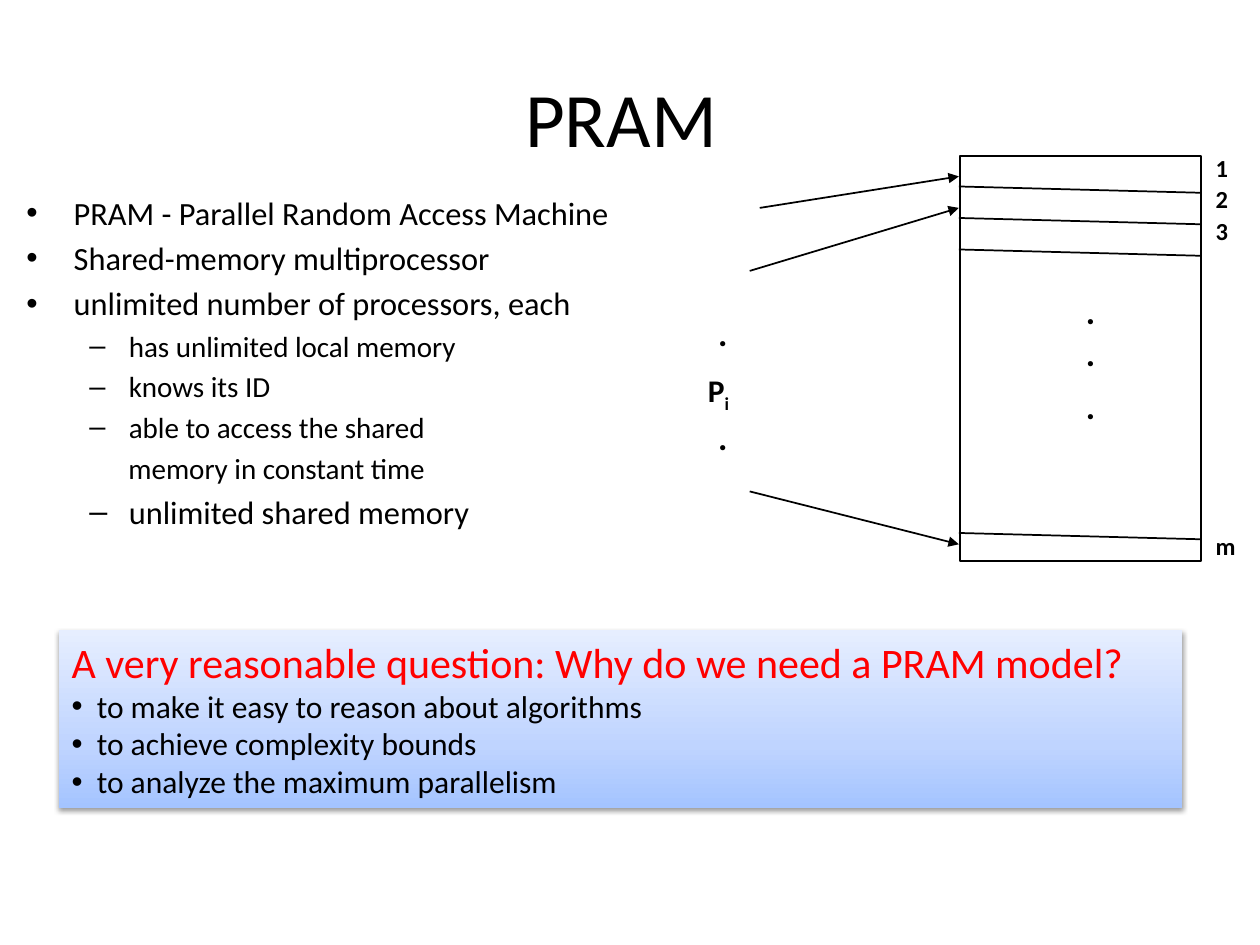
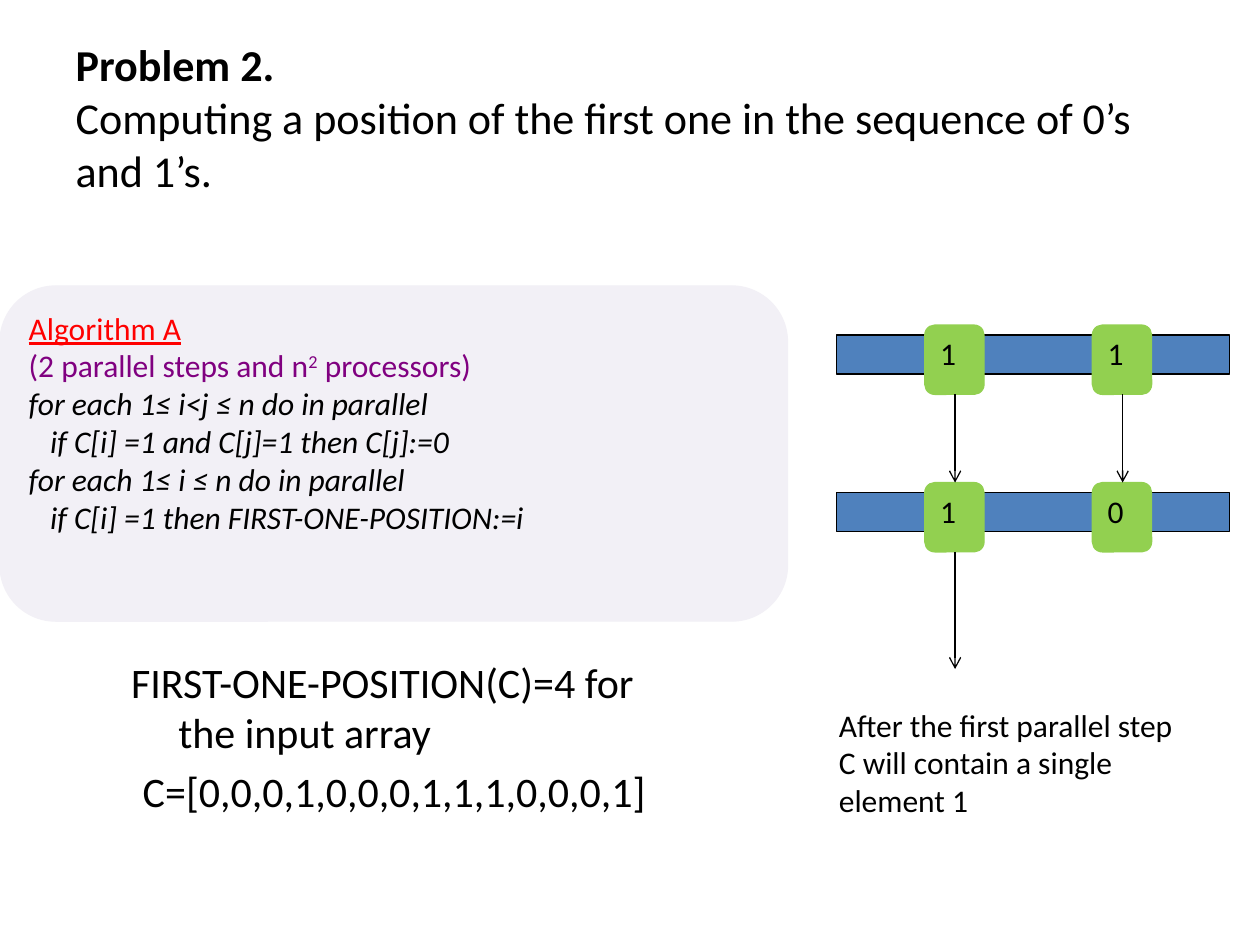
"""Build two slides on the PRAM model and the first-one-position problem."""
import copy

import lxml.etree
import pptx
import pptx.dml.color
import pptx.enum.shapes
import pptx.enum.text
import pptx.oxml.ns
import pptx.util

Inches = pptx.util.Inches
Pt = pptx.util.Pt
qn = pptx.oxml.ns.qn
SHAPES = pptx.enum.shapes.MSO_SHAPE
ALIGN = pptx.enum.text.PP_ALIGN
ANCHOR = pptx.enum.text.MSO_ANCHOR
AUTOSIZE = pptx.enum.text.MSO_AUTO_SIZE

FONT = "Calibri"
COLORS = {
    "black": "000000", "white": "FFFFFF", "red": "FF0000", "purple": "800080",
    "panel": "F2F0F6", "bar": "4F81BD", "cell": "92D050",
    "sky_low": "A4C4FF", "sky_mid": "BFD4FF", "sky_high": "E6EEFF",
}


def rgb(name):
    """Return the named colour."""
    return pptx.dml.color.RGBColor.from_string(COLORS[name])


def add_line(frame, text, size, color="black", bold=None, italic=None,
             level=0, bullet=None, left=None, hang=0):
    """Add a paragraph; text is a string or a list of (text, baseline) runs."""
    paragraph = frame.add_paragraph() if frame.text else frame.paragraphs[0]
    paragraph.level = level
    properties = paragraph._p.get_or_add_pPr()
    if left is not None:
        properties.set("marL", str(Inches(left)))
        properties.set("indent", str(Inches(-hang)))
    if bullet == "none":
        lxml.etree.SubElement(properties, qn("a:buNone"))
    elif bullet:
        lxml.etree.SubElement(properties, qn("a:buFont")).set("typeface", "Arial")
        lxml.etree.SubElement(properties, qn("a:buChar")).set("char", bullet)
    font = paragraph.font
    font.name, font.size, font.bold, font.italic = FONT, Pt(size), bold, italic
    font.color.rgb = rgb(color)
    for content, baseline in [(text, 0)] if isinstance(text, str) else text:
        run = paragraph.add_run()
        run.text = content
        if baseline:
            run._r.get_or_add_rPr().set("baseline", str(baseline * 1000))
    return paragraph


def place(placeholder, left, top, width, height):
    """Move a placeholder and return its text frame at a fixed text size."""
    placeholder.left, placeholder.top = Inches(left), Inches(top)
    placeholder.width, placeholder.height = Inches(width), Inches(height)
    placeholder.text_frame.auto_size = AUTOSIZE.NONE
    return placeholder.text_frame


def title_frame(slide):
    """Place the title where both slides have it."""
    frame = place(slide.shapes.title, 0.5, 0.3, 9, 1.25)
    frame.vertical_anchor = ANCHOR.MIDDLE
    return frame


def add_box(slide, kind, left, top, width, height, fill=None, line=None, weight=0.75):
    """Add a flat preset shape with text at top left."""
    box = slide.shapes.add_shape(kind, Inches(left), Inches(top), Inches(width), Inches(height))
    box.shadow.inherit = False
    if fill:
        box.fill.solid()
        box.fill.fore_color.rgb = rgb(fill)
    if line:
        box.line.color.rgb = rgb(line)
        box.line.width = Pt(weight)
    else:
        box.line.fill.background()
    box.text_frame.word_wrap = True
    box.text_frame.vertical_anchor = ANCHOR.TOP
    box.text_frame.paragraphs[0].alignment = ALIGN.LEFT
    return box


def add_stroke(slide, start, end, weight=1, head=None):
    """Draw a straight black line, with an arrowhead at its end if named."""
    stroke = slide.shapes.add_connector(
        pptx.enum.shapes.MSO_CONNECTOR.STRAIGHT, *map(Inches, start + end))
    stroke.line.color.rgb = rgb("black")
    stroke.line.width = Pt(weight)
    properties = stroke._element.spPr
    if head:
        lxml.etree.SubElement(properties.find(qn("a:ln")), qn("a:tailEnd")).set("type", head)
    lxml.etree.SubElement(properties, qn("a:effectLst"))


def add_text(slide, left, top, width, height, wrap=True):
    """Add a text box and return its frame."""
    frame = slide.shapes.add_textbox(
        Inches(left), Inches(top), Inches(width), Inches(height)).text_frame
    frame.word_wrap = wrap
    frame.auto_size = AUTOSIZE.SHAPE_TO_FIT_TEXT
    return frame


def add_label(slide, text, left, top, width, height, size, wrap=False):
    """Add a bold diagram label."""
    frame = add_text(slide, left, top, width, height, wrap)
    add_line(frame, text, size, bold=True).line_spacing = 0.9


def add_glow(box):
    """Give a box the blue gradient and a soft shadow below it."""
    box.fill.gradient()
    box.fill.gradient_angle = 90
    properties = box._element.spPr
    stops = properties.find(".//" + qn("a:gsLst"))
    stops.append(copy.deepcopy(stops[0]))
    sky = [(0, "sky_low"), (0.35, "sky_mid"), (1, "sky_high")]
    for stop, (position, color) in zip(box.fill.gradient_stops, sky):
        stop.position = position
        stop.color.rgb = rgb(color)
    shadow = lxml.etree.SubElement(properties.find(qn("a:effectLst")), qn("a:outerShdw"))
    for key, value in (("blurRad", Pt(3.1)), ("dist", Pt(1.6)), ("dir", 90 * 60000),
                       ("rotWithShape", 0)):
        shadow.set(key, str(int(value)))
    black = lxml.etree.SubElement(shadow, qn("a:srgbClr"))
    black.set("val", COLORS["black"])
    lxml.etree.SubElement(black, qn("a:alpha")).set("val", "38000")


def add_memory_diagram(slide):
    """Draw the processors and the shared memory they access."""
    memory_left, memory_right, drop = 7.61, 9.53, 0.05
    add_box(slide, SHAPES.RECTANGLE, 7.62, 1.24, 1.91, 3.21, "white", "black", 1)
    for top in (1.48, 1.73, 1.98, 4.23):
        add_stroke(slide, (memory_left, top), (memory_right, top + drop))
    for left, top, width in ((8.52, 2.29, 0.27), (8.52, 2.62, 0.22), (8.52, 3.04, 0.22),
                             (5.6, 2.46, 0.35), (5.6, 3.29, 0.35)):
        add_label(slide, ".", left, top, width, 0.4, 20, wrap=True)
    for start, cell_top in (((6.03, 1.65), 1.4), ((5.95, 2.15), 1.65), ((5.95, 3.9), 4.32)):
        add_stroke(slide, start, (memory_left, cell_top), head="triangle")
    for address, top, width in (("1", 1.19, 0.31), ("2", 1.44, 0.31),
                                ("3", 1.69, 0.31), ("m", 4.19, 0.37)):
        add_label(slide, address, 9.55, top, width, 0.31, 14)
    add_label(slide, [("P", 0), ("i", -25)], 5.52, 2.9, 0.41, 0.37, 18)


def build_pram(slide):
    """Introduce the PRAM model."""
    add_line(title_frame(slide), "PRAM ", 44)
    features = place(slide.placeholders[1], 0.11, 1.48, 9.19, 2.81)
    for text in ("PRAM - Parallel Random Access Machine", "Shared-memory multiprocessor",
                 "unlimited number of processors, each"):
        add_line(features, text, 18.5)
    for text in ("has unlimited local memory", "knows its ID", "able to access the shared"):
        add_line(features, text, 16.6, level=1)
    add_line(features, "memory in constant time", 16.6, level=1, bullet="none", left=0.81)
    add_line(features, "unlimited shared memory", 18.5, level=1)

    question = add_box(slide, SHAPES.RECTANGLE, 0.47, 5, 8.91, 1.41)
    add_glow(question)
    add_line(question.text_frame, "A very reasonable question: Why do we need a PRAM model?",
             24, "red")
    for reason in ("to make it easy to reason about algorithms",
                   "to achieve complexity bounds", "to analyze the maximum parallelism"):
        add_line(question.text_frame, reason, 18, bullet="•",
                 left=0.2, hang=0.2).alignment = ALIGN.LEFT
    add_memory_diagram(slide)


def add_array_steps(slide):
    """Draw the array before and after the first parallel step."""
    columns, rows = (7.34, 8.67), (2.58, 3.83)
    for top in rows:
        add_box(slide, SHAPES.RECTANGLE, 6.64, top + 0.08, 3.12, 0.31, "bar", "black")
    for top, values in zip(rows, ("11", "10")):
        for left, value in zip(columns, values):
            cell = add_box(slide, SHAPES.ROUNDED_RECTANGLE, left, top,
                           0.47, 0.55, "cell", "cell")
            add_line(cell.text_frame, value, 18)
    for column, start, end in ((0, 3.13, 3.83), (1, 3.13, 3.83), (0, 4.38, 5.31)):
        middle = columns[column] + 0.24
        add_stroke(slide, (middle, start), (middle, end), 0.75, "arrow")


def build_first_one(slide):
    """Present Algorithm A for the first-one-position problem."""
    heading = add_line(title_frame(slide), "Problem 2.", 25.2)
    heading.alignment = ALIGN.LEFT
    heading.runs[0].font.bold = True
    heading.add_line_break()
    heading.add_run().text = ("Computing a position of the first one in the sequence "
                              "of 0’s and 1’s.")

    example = place(slide.placeholders[1], 0.94, 5.16, 4.38, 1.72)
    add_line(example, "FIRST-ONE-POSITION(C)=4 for the input array", 24, bullet="none")
    add_line(example, "C=[0,0,0,1,0,0,0,1,1,1,0,0,0,1]", 24,
             bullet="none").alignment = ALIGN.CENTER

    algorithm = add_box(slide, SHAPES.ROUNDED_RECTANGLE, 0, 2.27, 6.25, 2.66,
                        "panel", "panel").text_frame
    add_line(algorithm, "Algorithm A", 18, "red").font.underline = True
    add_line(algorithm, [("(2 parallel steps and n", 0), ("2", 30), (" processors)", 0)],
             18, "purple")
    for step, indent in (("for each 1≤ i<j ≤ n do in parallel", 0),
                         ("if C[i] =1 and C[j]=1 then C[j]:=0", 0.17),
                         ("for each 1≤ i ≤ n do in parallel", 0),
                         ("if C[i] =1 then FIRST-ONE-POSITION:=i", 0.17)):
        add_line(algorithm, step, 18, italic=True, left=indent)
    for paragraph in algorithm.paragraphs:
        paragraph.alignment = ALIGN.LEFT

    add_array_steps(slide)
    add_line(add_text(slide, 6.56, 5.55, 2.97, 1.72),
             "After the first parallel step C will contain a single element 1", 18)


def main():
    """Build and save the presentation."""
    deck = pptx.Presentation()
    deck.slide_width, deck.slide_height = Inches(10), Inches(7.5)
    for build in (build_pram, build_first_one):
        build(deck.slides.add_slide(deck.slide_layouts[1]))
    deck.save("out.pptx")


if __name__ == "__main__":
    main()
